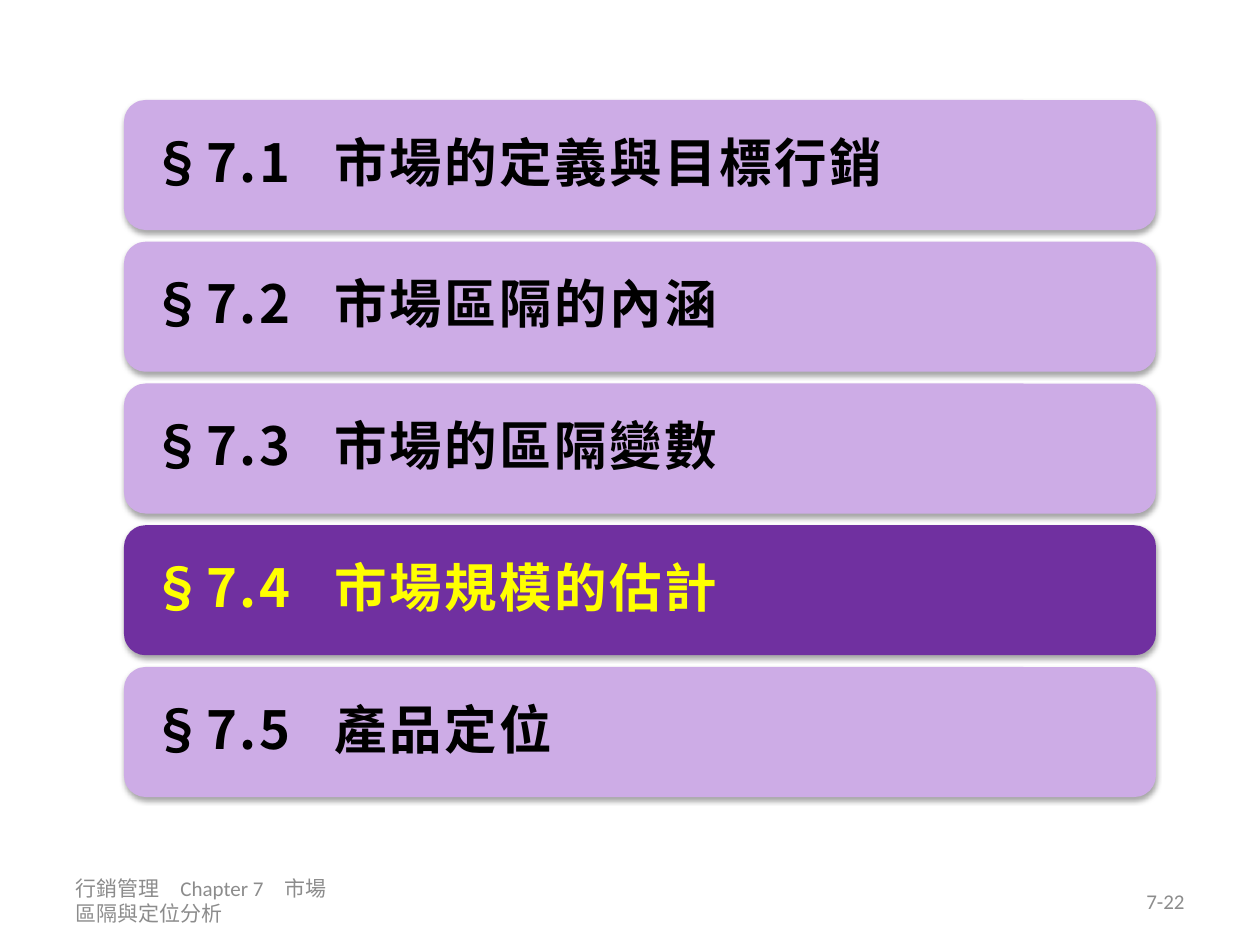
import pptx
import pptx.util
import pptx.dml.color
import pptx.enum.shapes
import pptx.enum.text
import pptx.oxml
import pptx.oxml.ns

RGB = pptx.dml.color.RGBColor
ANCHOR = pptx.enum.text.MSO_ANCHOR
ALIGN = pptx.enum.text.PP_ALIGN
qn = pptx.oxml.ns.qn
NS = pptx.oxml.ns.nsdecls("a")

LILAC = RGB(0xCD, 0xAC, 0xE6)
PURPLE = RGB(0x70, 0x30, 0xA0)
YELLOW = RGB(0xFF, 0xFF, 0x00)
BLACK = RGB(0x00, 0x00, 0x00)
GRAY = RGB(0x8C, 0x8C, 0x8C)
SANS = "Calibri"
HAN = "Noto Sans CJK SC"

TOPICS = [
    ("§7.1", "市場的定義與目標行銷"),
    ("§7.2", "市場區隔的內涵"),
    ("§7.3", "市場的區隔變數"),
    ("§7.4", "市場規模的估計"),
    ("§7.5", "產品定位"),
]
ACTIVE = 3


def px(n):
    return pptx.util.Emu(round(n * 914400 / 126))


def add_run(para, text, size, color, face, bold=False, space=0):
    run = para.add_run()
    run.text = text
    font = run.font
    font.size = pptx.util.Pt(size)
    font.bold = bold
    font.name = face
    font.color.rgb = color
    props = run._r.get_or_add_rPr()
    if space:
        props.set("spc", str(space))
    latin = props.find(qn("a:latin"))
    latin.addnext(pptx.oxml.parse_xml(f'<a:ea {NS} typeface="{HAN}"/>'))


def add_glow(shape):
    shape.shadow.inherit = False
    effects = shape._element.spPr.find(qn("a:effectLst"))
    effects.append(pptx.oxml.parse_xml(
        f'<a:outerShdw {NS} blurRad="40000" dist="23000" dir="5400000" rotWithShape="0">'
        '<a:srgbClr val="000000"><a:alpha val="35000"/></a:srgbClr></a:outerShdw>'))


def add_bar(slide, box, topic, fill, ink):
    bar = slide.shapes.add_shape(
        pptx.enum.shapes.MSO_SHAPE.ROUNDED_RECTANGLE, *map(px, box))
    bar.fill.solid()
    bar.fill.fore_color.rgb = fill
    bar.line.fill.background()
    add_glow(bar)
    frame = bar.text_frame
    frame.word_wrap = True
    frame.vertical_anchor = ANCHOR.MIDDLE
    frame.margin_left = frame.margin_right = px(21)
    para = frame.paragraphs[0]
    para.alignment = ALIGN.LEFT
    para.line_spacing = 0.9
    para._p.get_or_add_pPr().append(pptx.oxml.parse_xml(
        f'<a:tabLst {NS}><a:tab pos="{px(183)}" algn="l"/></a:tabLst>'))
    number, title = topic
    add_run(para, number + "\t", 30, ink, HAN, True, 150)
    add_run(para, title, 30, ink, HAN, True, 150)


def add_list(slide, box):
    left, top, width, height = box
    tall = 130
    step = (height - tall) / (len(TOPICS) - 1)
    for i, topic in enumerate(TOPICS):
        fill, ink = (PURPLE, YELLOW) if i == ACTIVE else (LILAC, BLACK)
        add_bar(slide, (left, top + i * step, width, tall), topic, fill, ink)


def add_note(slide, box, text, align):
    note = slide.shapes.add_textbox(*map(px, box))
    frame = note.text_frame
    frame.word_wrap = True
    frame.vertical_anchor = ANCHOR.MIDDLE
    para = frame.paragraphs[0]
    para.alignment = align
    add_run(para, text, 12, GRAY, SANS)


def add_foot(slide, box):
    left, top, width, height = box
    wide = 294
    add_note(slide, (left, top, wide, height),
             "行銷管理　Chapter 7　市場區隔與定位分析", ALIGN.LEFT)
    add_note(slide, (left + width - wide, top, wide, height), "7-22", ALIGN.RIGHT)


def main():
    deck = pptx.Presentation()
    deck.slide_width = px(1260)
    deck.slide_height = px(945)
    slide = deck.slides.add_slide(deck.slide_layouts[6])
    add_list(slide, (124, 100, 1032, 697))
    add_foot(slide, (63, 876, 1134, 50))
    deck.save("out.pptx")


if __name__ == "__main__":
    main()
